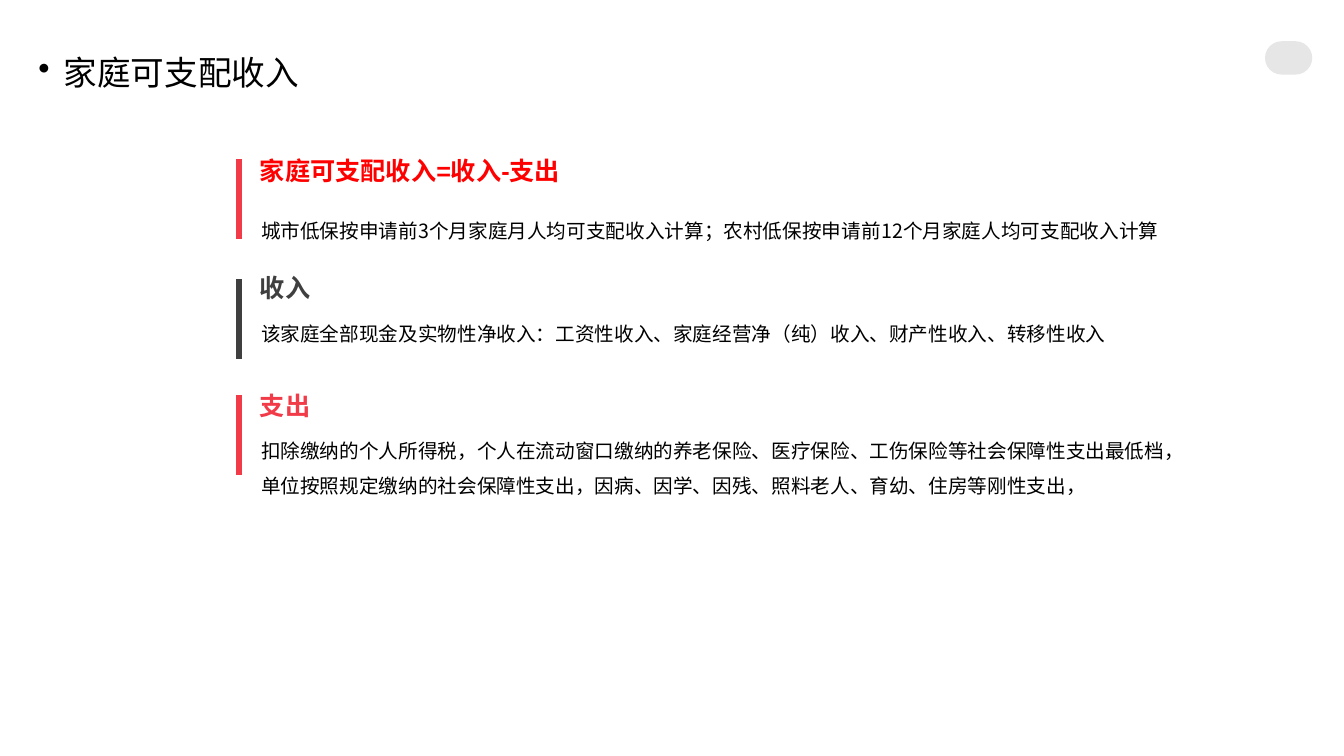
from dataclasses import dataclass

from lxml import etree
from pptx import Presentation
from pptx.dml.color import RGBColor
from pptx.enum.shapes import MSO_CONNECTOR, MSO_SHAPE
from pptx.enum.text import MSO_ANCHOR, MSO_AUTO_SIZE, PP_ALIGN
from pptx.oxml.ns import qn
from pptx.util import Cm, Pt

STRAIGHT = MSO_CONNECTOR.STRAIGHT
ROUNDED = MSO_SHAPE.ROUNDED_RECTANGLE
TOP = MSO_ANCHOR.TOP
LEFT = PP_ALIGN.LEFT
NO_FIT = MSO_AUTO_SIZE.NONE
TITLE_ONLY = 5

COLORS = {
    "black": "000000",
    "accent": "F23B48",
    "dark": "3F3F3F",
    "red": "FF0000",
    "badge": "E7E6E6",
}
HEADING_FONT = "Arial"
BODY_FONT = "Noto Sans CJK SC"

FIRST_TOP = 4.01
SECTION_PITCH = 2.95
BAR_LEFT, BAR_HEIGHT = 6.02, 2.0
HEADING_LEFT, BODY_LEFT = 6.55, 6.58


@dataclass
class Section:
    heading: str
    body: str
    heading_color: str
    bar_color: str
    bar_offset: float = 0.0
    body_offset: float = 0.86
    body_width: float = 23.04


SECTIONS = [
    Section(
        "家庭可支配收入=收入-支出",
        "城市低保按申请前3个月家庭月人均可支配收入计算；"
        "农村低保按申请前12个月家庭人均可支配收入计算",
        "red", "accent", body_offset=1.2, body_width=23.75,
    ),
    Section(
        "收入",
        "该家庭全部现金及实物性净收入：工资性收入、家庭经营净（纯）收入、"
        "财产性收入、转移性收入",
        "dark", "dark", bar_offset=0.08,
    ),
    Section(
        "支出",
        "扣除缴纳的个人所得税，个人在流动窗口缴纳的养老保险、医疗保险、"
        "工伤保险等社会保障性支出最低档，单位按照规定缴纳的社会保障性支出，"
        "因病、因学、因残、照料老人、育幼、住房等刚性支出，",
        "accent", "accent", bar_offset=0.05,
    ),
]


def rgb(name: str) -> RGBColor:
    return RGBColor.from_string(COLORS[name])


def format_paragraph(para, font: str, size: float, color: str, bold: bool,
                     line_spacing: float, space_before: float) -> None:
    para.alignment = LEFT
    para.line_spacing = line_spacing
    para.space_before = Pt(space_before)
    para.font.name = font
    para.font.size = Pt(size)
    para.font.bold = bold
    para.font.color.rgb = rgb(color)


def add_text(page, left: float, top: float, width: float, height: float,
             text: str, font: str, size: float, color: str, bold: bool,
             line_spacing: float) -> None:
    box = page.shapes.add_textbox(Cm(left), Cm(top), Cm(width), Cm(height))
    frame = box.text_frame
    frame.word_wrap = True
    frame.margin_left = frame.margin_right = 0
    frame.margin_top = frame.margin_bottom = 0
    para = frame.paragraphs[0]
    para.text = text
    format_paragraph(para, font, size, color, bold, line_spacing, 7.5)


def add_bar(page, top: float, color: str) -> None:
    bar = page.shapes.add_connector(
        STRAIGHT, Cm(BAR_LEFT), Cm(top), Cm(BAR_LEFT), Cm(top + BAR_HEIGHT))
    bar.line.color.rgb = rgb(color)
    bar.line.width = Pt(4)
    etree.SubElement(bar._element.spPr, qn("a:effectLst"))


def add_section(page, section: Section, top: float) -> None:
    add_text(page, BODY_LEFT, top + section.body_offset, section.body_width,
             1.42, section.body, BODY_FONT, 14, "black", False, 1.5)
    add_text(page, HEADING_LEFT, top, 11.91, 0.84, section.heading,
             HEADING_FONT, 18, section.heading_color, True, 0.9)
    add_bar(page, top + section.bar_offset, section.bar_color)


def add_badge(page) -> None:
    badge = page.shapes.add_shape(
        ROUNDED, Cm(31.88), Cm(1.04), Cm(1.19), Cm(0.84))
    badge.adjustments[0] = 0.5
    badge.shadow.inherit = False
    badge.fill.solid()
    badge.fill.fore_color.rgb = rgb("badge")
    badge.line.fill.background()


def set_title(page, text: str) -> None:
    title = page.shapes.title
    title.left, title.top = Cm(0.71), Cm(1.3)
    title.width, title.height = Cm(10.59), Cm(1.17)
    frame = title.text_frame
    frame.auto_size = NO_FIT
    frame.vertical_anchor = TOP
    para = frame.paragraphs[0]
    para.text = text
    format_paragraph(para, HEADING_FONT, 24, "black", False, 0.9, 10)
    properties = para._p.get_or_add_pPr()
    properties.set("marL", str(Cm(0.64)))
    properties.set("indent", str(Cm(-0.64)))
    bullet = etree.Element(qn("a:buChar"), char="•")
    properties.find(qn("a:defRPr")).addprevious(bullet)


def main() -> None:
    deck = Presentation()
    deck.slide_width, deck.slide_height = Cm(33.87), Cm(19.05)
    page = deck.slides.add_slide(deck.slide_layouts[TITLE_ONLY])
    add_badge(page)
    for index, section in enumerate(SECTIONS):
        add_section(page, section, FIRST_TOP + index * SECTION_PITCH)
    set_title(page, "家庭可支配收入")
    deck.save("out.pptx")


if __name__ == "__main__":
    main()
